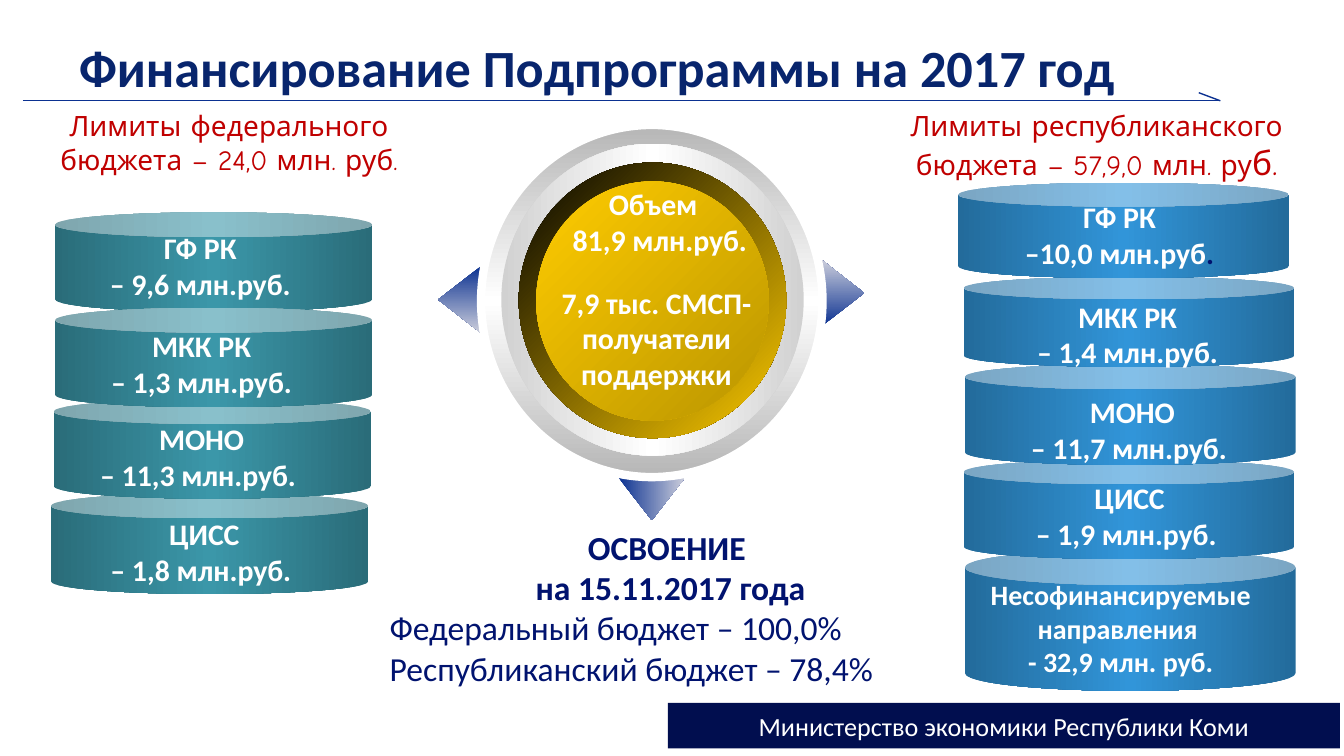
from lxml import etree
from pptx import Presentation
from pptx.dml.color import RGBColor
from pptx.enum.shapes import MSO_CONNECTOR, MSO_SHAPE
from pptx.enum.text import MSO_ANCHOR, PP_ALIGN
from pptx.oxml.ns import qn
from pptx.util import Inches, Pt

CAN, OVAL = MSO_SHAPE.CAN, MSO_SHAPE.OVAL
ARROW, RECTANGLE = MSO_SHAPE.UP_ARROW, MSO_SHAPE.RECTANGLE
STRAIGHT = MSO_CONNECTOR.STRAIGHT
LEFT, CENTER = PP_ALIGN.LEFT, PP_ALIGN.CENTER
MIDDLE = MSO_ANCHOR.MIDDLE

WHITE = RGBColor(0xFF, 0xFF, 0xFF)
BLACK = RGBColor(0x00, 0x00, 0x00)
NAVY = RGBColor(0x01, 0x0E, 0x4F)
TITLE_BLUE = RGBColor(0x08, 0x25, 0x6D)
TEXT_BLUE = RGBColor(0x01, 0x13, 0x6F)
LINE_BLUE = RGBColor(0x0B, 0x31, 0x91)
PALE = RGBColor(0xCD, 0xCF, 0xDC)
RED = RGBColor(0xC0, 0x00, 0x00)
TEAL_DARK = RGBColor(0x2A, 0x6C, 0x79)
TEAL = RGBColor(0x3B, 0x97, 0xA9)
BLUE_DARK = RGBColor(0x23, 0x6B, 0x9B)
BLUE = RGBColor(0x31, 0x95, 0xD9)
GRAY = RGBColor(0xB6, 0xB6, 0xB6)
SILVER = RGBColor(0xD1, 0xD1, 0xD1)
GOLD = RGBColor(0xFF, 0xCC, 0x00)
GOLD_DARK = RGBColor(0xBA, 0x95, 0x00)

TEAL_BLEND = (TEAL_DARK, TEAL, TEAL_DARK)
BLUE_BLEND = (BLUE_DARK, BLUE, BLUE_DARK)

FEDERAL_CANS = [(0.41, 1.58, 0.74), (0.38, 3.67, 0.75), (0.4, 2.97, 0.74), (0.41, 2.29, 0.74)]
REPUBLIC_CANS = [
    (7.18, 4.09, 1.05), (7.17, 3.42, 0.74), (7.18, 2.71, 0.75),
    (7.17, 2.06, 0.67), (7.13, 1.36, 0.71),
]
LABELS = [
    ((0.54, 1.66, 1.95, 0.64), "ГФ РК ", "– 9,6 млн.руб. "),
    ((0.48, 2.39, 2.09, 0.64), "МКК РК ", "– 1,3 млн.руб. "),
    ((0.4, 3.08, 2.2, 0.64), "МОНО", "– 11,3 млн.руб. "),
    ((0.51, 3.79, 2.02, 0.64), "ЦИСС", "– 1,8 млн.руб. "),
    ((7.41, 2.17, 2.01, 0.64), "МКК РК ", "– 1,4 млн.руб. "),
    ((7.13, 2.88, 2.59, 0.64), "МОНО", "– 11,7 млн.руб. "),
    ((7.43, 3.52, 1.95, 0.64), "ЦИСС", "– 1,9 млн.руб. "),
]
ARROWS = [(3.17, 2.07, 270), (6.02, 2.02, 90), (4.6, 3.55, 180)]
DISCS = [
    ((3.58, 0.93, 2.54, 2.62), (GRAY, WHITE, GRAY), 90),
    ((3.73, 1.07, 2.25, 2.32), (SILVER, WHITE, SILVER), 0),
    ((3.86, 1.21, 1.99, 2.05), (BLACK, GOLD), 45),
    ((3.99, 1.35, 1.73, 1.78), (GOLD, GOLD_DARK), 45),
]


def add_figure(page, kind, area):
    """Add a preset shape without line or shadow."""
    figure = page.shapes.add_shape(kind, *map(Inches, area))
    figure.shadow.inherit = False
    figure.line.fill.background()
    return figure


def blend(figure, colors, angle=0):
    """Fill a shape with evenly spaced colours, the angle running clockwise."""
    figure.fill.gradient()
    figure.fill.gradient_angle = (360 - angle) % 360
    stops = figure._element.spPr.find(qn("a:gradFill")).find(qn("a:gsLst"))
    stops.clear()
    for index, color in enumerate(colors):
        position = 100000 * index // (len(colors) - 1)
        stop = etree.SubElement(stops, qn("a:gs"), pos=str(position))
        etree.SubElement(stop, qn("a:srgbClr"), val=str(color))


def add_can(page, left, top, width, height, colors):
    """Add one drum of a stack."""
    can = add_figure(page, CAN, (left, top, width, height))
    can.adjustments[0] = 0.25
    blend(can, colors)


def add_arrow(page, left, top, rotation):
    """Add a triangular pointer beside the dial."""
    arrow = add_figure(page, ARROW, (left, top, 0.5, 0.32))
    arrow.adjustments[0] = 0.52
    arrow.adjustments[1] = 1
    arrow.rotation = rotation
    arrow._element.spPr.find(qn("a:xfrm")).set("flipH", "1")
    blend(arrow, (LINE_BLUE, PALE))


def add_rule(page, start, end):
    """Add a thin straight line."""
    rule = page.shapes.add_connector(STRAIGHT, *map(Inches, start + end))
    rule.line.color.rgb = LINE_BLUE
    rule.line.width = Pt(0.75)
    etree.SubElement(rule._element.spPr, qn("a:effectLst"))


def add_span(para, text, size, color, bold=False, font="Calibri"):
    """Add one formatted run."""
    span = para.add_run()
    span.text = text
    span.font.name = font
    span.font.size = Pt(size)
    span.font.bold = bold
    span.font.color.rgb = color


def add_box(page, area, lines, size, color, bold=False, font="Calibri", align=CENTER):
    """Add a wrapping text box with a paragraph per line and return its paragraphs."""
    box = page.shapes.add_textbox(*map(Inches, area))
    frame = box.text_frame
    frame.word_wrap = True
    for index, line in enumerate(lines):
        para = frame.add_paragraph() if index else frame.paragraphs[0]
        para.alignment = align
        add_span(para, line, size, color, bold, font)
    return frame.paragraphs


def add_footer(page):
    """Add the ministry band."""
    band = add_figure(page, RECTANGLE, (4.97, 5.23, 5, 0.34))
    band.fill.solid()
    band.fill.fore_color.rgb = NAVY
    band.text_frame.vertical_anchor = MIDDLE
    para = band.text_frame.paragraphs[0]
    para.alignment = CENTER
    add_span(para, "Министерство экономики Республики Коми", 14, WHITE)


def add_header(page):
    """Add the title, its rule and the two budget limits."""
    add_rule(page, (0.17, 0.75), (9.08, 0.75))
    add_rule(page, (8.92, 0.69), (9.08, 0.75))
    add_box(page, (0.49, 0.21, 9.2, 0.57), ["Финансирование Подпрограммы на 2017 год"],
            28, TITLE_BLUE, bold=True, align=LEFT)
    add_box(page, (0.02, 0.76, 3.37, 0.61), ["Лимиты федерального бюджета – 24,0 млн. руб."],
            15, RED, font="Comic Neue")
    limit = add_box(page, (6.32, 0.76, 3.68, 0.66),
                    ["Лимиты республиканского бюджета – 57,9,0 млн. ру"],
                    15, RED, font="Comic Neue")
    add_span(limit[0], "б.", 18, RED, font="Comic Neue")


def add_stacks(page):
    """Add both stacks of drums with their labels."""
    for left, top, height in FEDERAL_CANS:
        add_can(page, left, top, 2.36, height, TEAL_BLEND)
    for left, top, height in REPUBLIC_CANS:
        add_can(page, left, top, 2.46, height, BLUE_BLEND)
    for area, name, amount in LABELS:
        add_box(page, area, [name, amount], 16, WHITE, bold=True)
    fund = add_box(page, (7.3, 1.43, 2.11, 0.64), ["ГФ РК ", "–10,0 млн.руб"],
                   16, WHITE, bold=True)
    add_span(fund[1], ". ", 16, TEXT_BLUE, bold=True)
    add_box(page, (6.96, 4.25, 2.76, 0.86),
            ["Несофинансируемые направления ", "- 32,9 млн. руб."], 15, WHITE, bold=True)


def add_dial(page):
    """Add the central dial with its pointers and text."""
    for left, top, rotation in ARROWS:
        add_arrow(page, left, top, rotation)
    for index, (area, colors, angle) in enumerate(DISCS):
        disc = add_figure(page, OVAL, area)
        blend(disc, colors, angle)
        if index == 0:
            disc.line.color.rgb = WHITE
            disc.line.width = Pt(4.5)
    volume = add_box(page, (3.73, 1.33, 2.31, 1.68),
                     ["Объем ", " 81,9 млн.руб.", "7,9 тыс. СМСП- получатели поддержки"],
                     16, WHITE, bold=True)
    volume[2].space_before = Pt(14.6)


def add_progress(page):
    """Add the budget use figures."""
    paras = add_box(page, (2.8, 3.87, 4.38, 1.31),
                    ["ОСВОЕНИЕ ", "на 15.11.2017 года",
                     "Федеральный бюджет – 100,0%", "Республиканский бюджет – 78,4%"],
                    18, TEXT_BLUE, bold=True)
    for para in paras[2:]:
        para.alignment = LEFT
        para.runs[0].font.bold = False


def main():
    """Build and save the slide."""
    deck = Presentation()
    deck.slide_width = Inches(10)
    deck.slide_height = deck.slide_width * 9 // 16
    page = deck.slides.add_slide(deck.slide_layouts[6])
    add_header(page)
    add_footer(page)
    add_stacks(page)
    add_dial(page)
    add_progress(page)
    deck.save("out.pptx")


if __name__ == "__main__":
    main()
